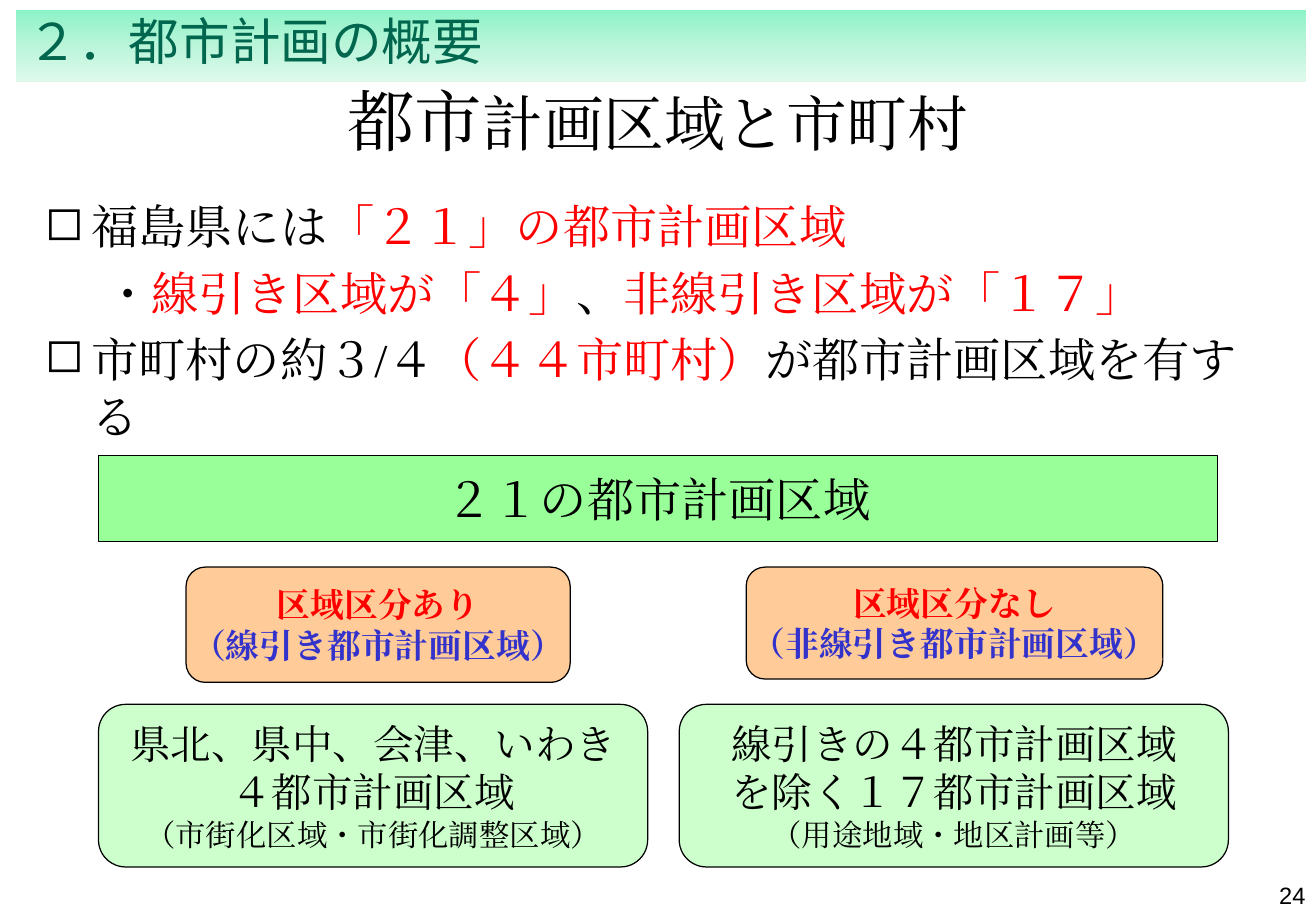
import copy
import pptx
import pptx.util
import pptx.dml.color
import pptx.enum.shapes
import pptx.enum.text
import pptx.oxml
import pptx.oxml.ns

Cm, Pt = pptx.util.Cm, pptx.util.Pt
KIND = pptx.enum.shapes.MSO_SHAPE
ALIGN = pptx.enum.text.PP_ALIGN
ANCHOR = pptx.enum.text.MSO_ANCHOR
qn = pptx.oxml.ns.qn

SERIF, SANS, GOTHIC = "Times New Roman", "Arial", "Noto Sans CJK JP"
BLACK, RED, BLUE = "000000", "FF0000", "3333CC"
LIME, PALE, PEACH, PINE = "99FF99", "CCFFCC", "FFCC99", "00664D"

# Content: a line is a list of runs (text, size, colour)
TITLE = [[("都市", 40, BLACK), ("計画区域と市町村", 36, BLACK)]]
BANNER = [[("２．都市計画の概要", 30, PINE)]]
SHADE = [(0, "8CF2C6"), (0.5, "BAF5DA"), (1, "DEF9EC")]
PAGE = [[("24", 14, BLACK)]]
POINTS = [
    [("福島県には", 28, BLACK), ("「２１」の都市計画区域", 28, RED)],
    [("・", 28, BLACK), ("線引き区域が「４」", 28, RED), ("、", 28, BLACK),
     ("非線引き区域が「１７」", 28, RED)],
    [("市町村の約３/４", 28, BLACK), ("（４４市町村）", 28, RED),
     ("が都市計画区域を有する", 28, BLACK)],
]
# (left margin, first-line indent, bullet) for each point
MARKS = [(0.97, -0.97, "◻"), (1.24, 0, None), (0.97, -0.97, "◻")]
TOTAL = [[("２１の都市計画区域", 28, BLACK)]]
# Left edge, then width and height of the tag, tag lines, detail lines
GROUPS = [
    (2.06, 3.89, 8.03, 2.41,
     [("区域区分あり", 20, RED), ("（線引き都市計画区域）", 20, BLUE)],
     [("県北、県中、会津、いわき", 24, BLACK), ("４都市計画区域", 24, BLACK),
      ("（市街化区域・市街化調整区域）", 18, BLACK)]),
    (14.2, 15.6, 8.71, 2.34,
     [("区域区分なし", 20, RED), ("（非線引き都市計画区域）", 20, BLUE)],
     [("線引きの４都市計画区域", 24, BLACK), ("を除く１７都市計画区域", 24, BLACK),
      ("（用途地域・地区計画等）", 18, BLACK)]),
]


def color(code):
    return pptx.dml.color.RGBColor.from_string(code)


def apply(item, style):
    for name, value in style.items():
        setattr(item, name, value)


def write(frame, lines, align, face=SERIF, bold=False, **style):
    apply(frame, style)
    for i, line in enumerate(lines):
        para = frame.paragraphs[0] if i == 0 else frame.add_paragraph()
        para.alignment = align
        for text, size, code in line:
            run = para.add_run()
            run.text = text
            apply(run.font, {"size": Pt(size), "name": face, "bold": bold})
            run.font.color.rgb = color(code)
            # Japanese text takes the same face
            latin = run.font._element.find(qn("a:latin"))
            east = copy.deepcopy(latin)
            east.tag = qn("a:ea")
            latin.addnext(east)


def block(kind, box, fill=None):
    shape = slide.shapes.add_shape(kind, *map(Cm, box))
    shape.shadow.inherit = False
    if fill:
        shape.fill.solid()
        shape.fill.fore_color.rgb = color(fill)
        shape.line.color.rgb = color(BLACK)
        shape.line.width = Pt(0.75)
    return shape


def label(kind, box, fill, lines, bold=False):
    frame = block(kind, box, fill).text_frame
    write(frame, lines, ALIGN.CENTER, bold=bold, word_wrap=False,
          vertical_anchor=ANCHOR.MIDDLE)


deck = pptx.Presentation()
apply(deck, {"slide_width": Cm(27.51), "slide_height": Cm(19.05)})
slide = deck.slides.add_slide(deck.slide_layouts[5])

# Title
head = slide.shapes.title
apply(head, {"left": Cm(1.37), "top": Cm(1.07),
             "width": Cm(24.77), "height": Cm(2.84)})
write(head.text_frame, TITLE, ALIGN.CENTER, word_wrap=True,
      vertical_anchor=ANCHOR.MIDDLE,
      auto_size=pptx.enum.text.MSO_AUTO_SIZE.NONE)

# Points
body = slide.shapes.add_textbox(Cm(0.69), Cm(4.01), Cm(26.37), Cm(4.65))
write(body.text_frame, POINTS, ALIGN.LEFT, word_wrap=True)
for i, (para, mark) in enumerate(zip(body.text_frame.paragraphs, MARKS)):
    margin, indent, sign = mark
    para.space_before = Pt(5.6 if i else 0)
    props = para._p.get_or_add_pPr()
    props.set("marL", str(Cm(margin)))
    props.set("indent", str(Cm(indent)))
    if sign:
        bullet = pptx.oxml.parse_xml(
            '<a:buChar xmlns:a="http://schemas.openxmlformats.org/'
            f'drawingml/2006/main" char="{sign}"/>')
        props.append(bullet)

# Total bar, then a tag and a detail box for each group
label(KIND.RECTANGLE, (2.06, 9.53, 23.39, 1.8), LIME, TOTAL)
for left, inner, width, height, tag, detail in GROUPS:
    label(KIND.ROUNDED_RECTANGLE, (inner, 11.86, width, height), PEACH,
          [[run] for run in tag], bold=True)
    label(KIND.ROUNDED_RECTANGLE, (left, 14.73, 11.48, 3.4), PALE,
          [[run] for run in detail])

# Section banner
banner = block(KIND.RECTANGLE, (0.33, 0.2, 26.97, 1.52))
banner.line.fill.background()
banner.fill.gradient()
banner.fill.gradient_angle = 270
last = banner._element.spPr.find(".//" + qn("a:gsLst"))[-1]
last.addnext(copy.deepcopy(last))
for stop, (place, code) in zip(banner.fill.gradient_stops, SHADE):
    stop.position = place
    stop.color.rgb = color(code)
write(banner.text_frame, BANNER, ALIGN.LEFT, GOTHIC, word_wrap=True,
      vertical_anchor=ANCHOR.TOP, margin_top=0, margin_bottom=0)

# Page number
page = slide.shapes.add_textbox(Cm(21.11), Cm(18.29), Cm(6.43), Cm(1.32))
write(page.text_frame, PAGE, ALIGN.RIGHT, SANS, word_wrap=True)

deck.save("out.pptx")
